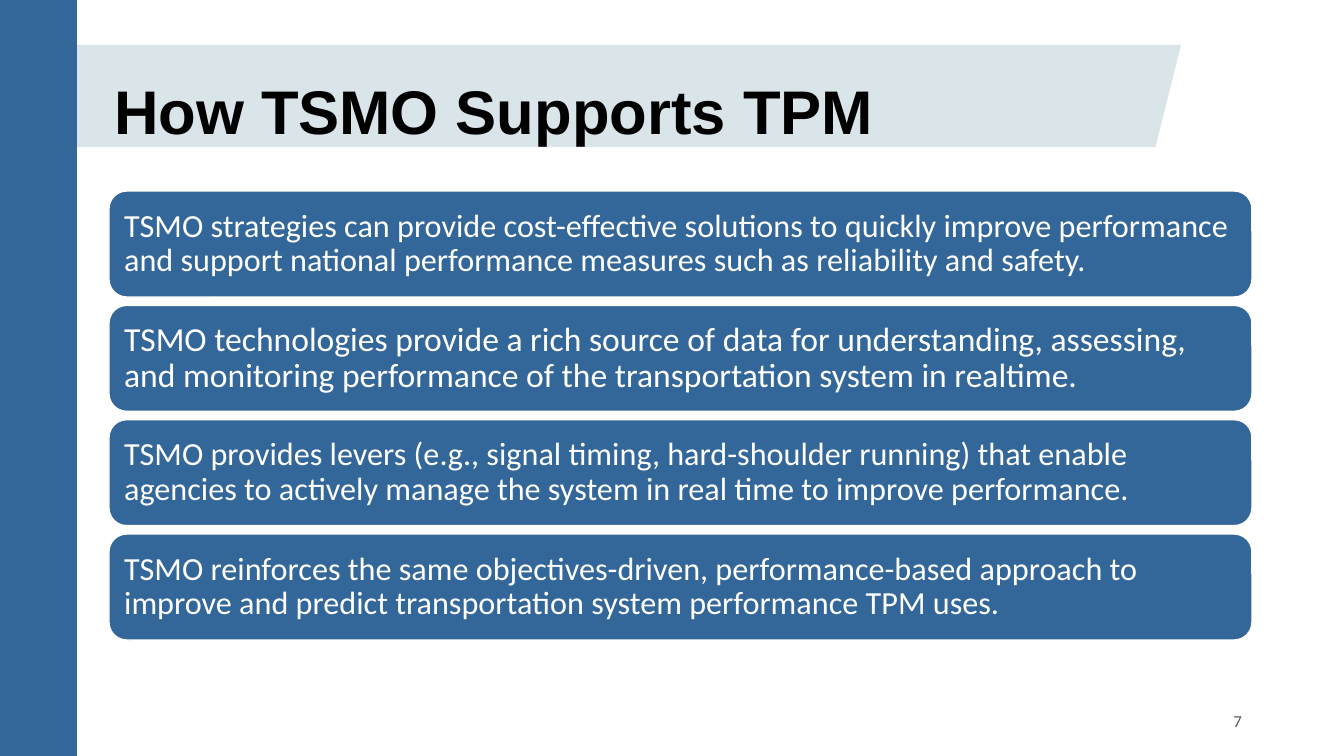
from pptx import Presentation
from pptx.dml.color import RGBColor
from pptx.enum.shapes import MSO_SHAPE
from pptx.enum.text import MSO_ANCHOR, MSO_AUTO_SIZE, PP_ALIGN
from pptx.util import Pt

TITLE = "How TSMO Supports TPM"
PAGE_NUMBER = "7"
BENEFITS = [
    ("TSMO strategies can provide cost-effective solutions to quickly improve performance "
     "and support national performance measures such as reliability and safety.", 23),
    ("TSMO technologies provide a rich source of data for understanding, assessing, "
     "and monitoring performance of the transportation system in realtime.", 24),
    ("TSMO provides levers (e.g., signal timing, hard-shoulder running) that enable "
     "agencies to actively manage the system in real time to improve performance.", 23),
    ("TSMO reinforces the same objectives-driven, performance-based approach to "
     "improve and predict transportation system performance TPM uses.", 23),
]

BLUE, PALE, WHITE, BLACK, GRAY = "336699", "DAE5EA", "FFFFFF", "000000", "595959"
SLIDE_WIDTH, SLIDE_HEIGHT = 1344, 756
BAND = (24, 45, 1157, 102)
SIDEBAR = (0, 0, 77, SLIDE_HEIGHT)
TITLE_BOX = (109, 71, 992, 55)
NUMBER_BOX = (950, 701, 302, 40)
CARD_LEFT, CARD_WIDTH, CARD_HEIGHT = 109, 1143, 106
FIRST_CARD_TOP, LAST_CARD_TOP = 191, 534


def px(length):
    return round(length * 914400 / 100.8)


def color(value):
    return RGBColor.from_string(value)


def apply(target, values):
    for name, value in values.items():
        setattr(target, name, value)


def place(shape, area):
    apply(shape, dict(zip(("left", "top", "width", "height"), map(px, area))))


def add_block(slide, kind, area, fill, line=None):
    block = slide.shapes.add_shape(kind, *map(px, area))
    block.shadow.inherit = False
    block.fill.solid()
    block.fill.fore_color.rgb = color(fill)
    if line:
        block.line.color.rgb = color(line)
        block.line.width = Pt(1)
    else:
        block.line.fill.background()
    return block


def write(box, text, font, ink, insets, anchor, align=PP_ALIGN.LEFT, spacing=0.9):
    frame = box.text_frame
    sides = ("margin_left", "margin_top", "margin_right", "margin_bottom")
    apply(frame, dict(zip(sides, map(px, insets))))
    apply(frame, {"word_wrap": True, "auto_size": MSO_AUTO_SIZE.NONE, "vertical_anchor": anchor})
    para = frame.paragraphs[0]
    apply(para, {"alignment": align, "line_spacing": spacing})
    span = para.add_run()
    span.text = text
    apply(span.font, font)
    span.font.color.rgb = color(ink)


def main():
    deck = Presentation()
    apply(deck, {"slide_width": px(SLIDE_WIDTH), "slide_height": px(SLIDE_HEIGHT)})
    page = deck.slides.add_slide(deck.slide_layouts[5])

    band = add_block(page, MSO_SHAPE.PARALLELOGRAM, BAND, PALE)
    band.adjustments[0] = 0.25
    add_block(page, MSO_SHAPE.RECTANGLE, SIDEBAR, BLUE)

    title = page.shapes.title
    page.shapes.element.append(title.element)
    place(title, TITLE_BOX)
    write(title, TITLE, {"name": "Arial", "size": Pt(44), "bold": True}, BLACK,
          (5, 10, 5, 0), MSO_ANCHOR.TOP)

    number = page.shapes.add_textbox(*map(px, NUMBER_BOX))
    write(number, PAGE_NUMBER, {"name": "Calibri", "size": Pt(12)}, GRAY,
          (10, 5, 10, 5), MSO_ANCHOR.MIDDLE, PP_ALIGN.RIGHT, 1.0)

    pitch = (LAST_CARD_TOP - FIRST_CARD_TOP) / (len(BENEFITS) - 1)
    for index, (text, size) in enumerate(BENEFITS):
        area = (CARD_LEFT, FIRST_CARD_TOP + index * pitch, CARD_WIDTH, CARD_HEIGHT)
        card = add_block(page, MSO_SHAPE.ROUNDED_RECTANGLE, area, BLUE, WHITE)
        write(card, text, {"name": "Calibri", "size": Pt(size)}, WHITE,
              (10, 10, 10, 10), MSO_ANCHOR.MIDDLE)

    deck.save("out.pptx")


if __name__ == "__main__":
    main()
